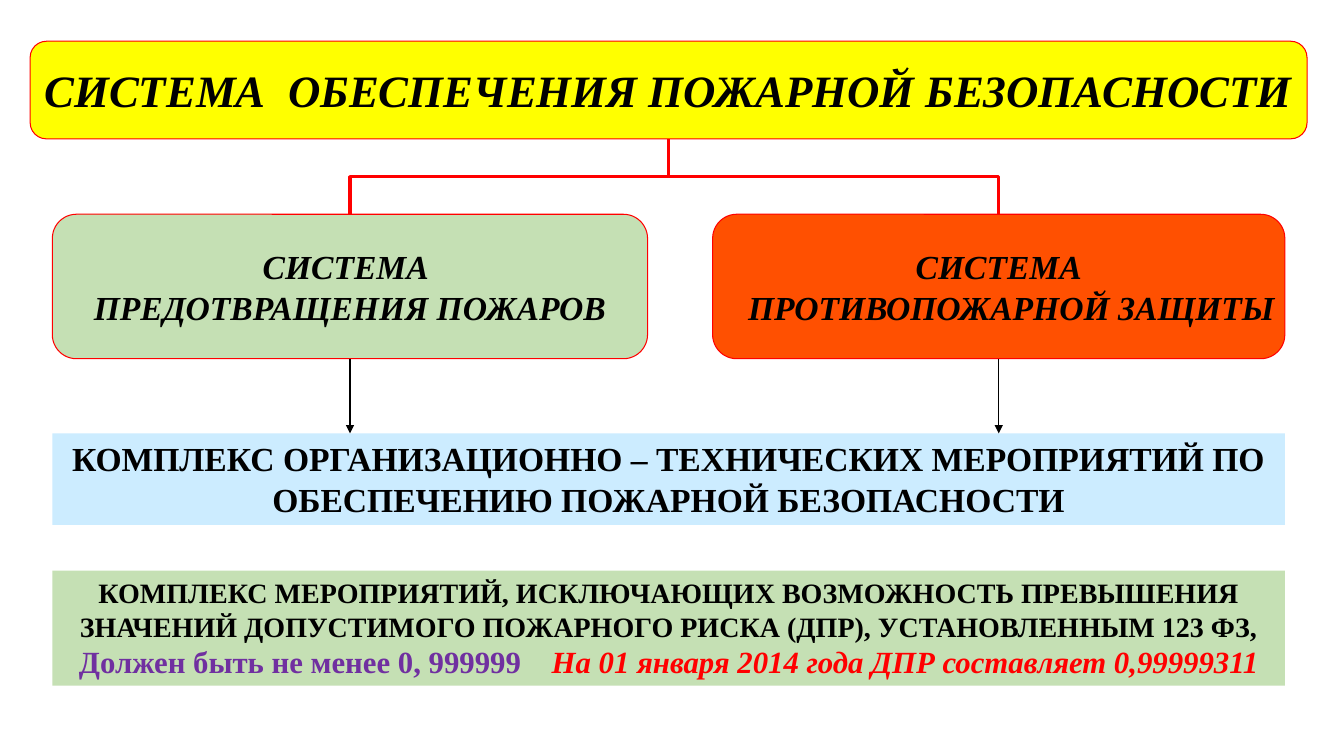
from dataclasses import dataclass

from lxml import etree
from pptx import Presentation
from pptx.dml.color import RGBColor
from pptx.enum.shapes import MSO_CONNECTOR, MSO_SHAPE
from pptx.enum.text import MSO_ANCHOR, PP_ALIGN
from pptx.oxml.ns import qn
from pptx.util import Cm, Pt

ROUNDED, RECTANGLE = MSO_SHAPE.ROUNDED_RECTANGLE, MSO_SHAPE.RECTANGLE
STRAIGHT, ELBOW = MSO_CONNECTOR.STRAIGHT, MSO_CONNECTOR.ELBOW
TOP, MIDDLE = MSO_ANCHOR.TOP, MSO_ANCHOR.MIDDLE
CENTER = PP_ALIGN.CENTER

FONT = "Times New Roman"
BLACK, RED, PURPLE = "000000", "FF0000", "7030A0"
YELLOW, GREEN, ORANGE, BLUE = "FFFF00", "C5E0B4", "FF5001", "CCECFF"


@dataclass
class Span:
    text: str
    color: str = BLACK
    italic: bool = False
    spacing: float = 0  # extra points after each letter


@dataclass
class Para:
    spans: list[Span]
    size: float
    indent: float = 0


@dataclass
class Box:
    """A filled block of text; lengths in centimetres."""
    left: float
    top: float
    width: float
    height: float
    fill: str
    paras: list[Para]
    rounded: bool = False

    @property
    def center(self) -> float:
        return self.left + self.width / 2

    @property
    def bottom(self) -> float:
        return self.top + self.height


def heading(text: str, size: float, indent: float = 0) -> Para:
    return Para([Span(text, italic=True)], size, indent)


TITLE = Box(0.76, 1.04, 32.18, 2.46, YELLOW,
            [heading("СИСТЕМА  ОБЕСПЕЧЕНИЯ ПОЖАРНОЙ БЕЗОПАСНОСТИ", 32)], True)
BRANCHES = [
    Box(1.32, 5.4, 15, 3.64, GREEN,
        [heading("СИСТЕМА ", 24), heading("ПРЕДОТВРАЩЕНИЯ ПОЖАРОВ", 24)], True),
    Box(17.96, 5.4, 14.42, 3.64, ORANGE,
        [heading("СИСТЕМА", 24),
         heading("ПРОТИВОПОЖАРНОЙ ЗАЩИТЫ", 24, indent=0.64)], True),
]
MEASURES = Box(1.32, 10.92, 31.06, 2.31, BLUE, [
    Para([Span("КОМПЛЕКС ОРГАНИЗАЦИОННО – ТЕХНИЧЕСКИХ МЕРОПРИЯТИЙ ПО "
               "ОБЕСПЕЧЕНИЮ ПОЖАРНОЙ БЕЗОПАСНОСТИ")], 24)])
RISK = Box(1.32, 14.38, 31.06, 2.9, GREEN, [
    Para([Span("КОМПЛЕКС МЕРОПРИЯТИЙ, ИСКЛЮЧАЮЩИХ ВОЗМОЖНОСТЬ ПРЕВЫШЕНИЯ "
               "ЗНАЧЕНИЙ ДОПУСТИМОГО ПОЖАРНОГО РИСКА (ДПР), "
               "УСТАНОВЛЕННЫМ 123 ФЗ,")], 20),
    Para([Span("Должен быть не менее 0, 999999", PURPLE),
          Span(" ", PURPLE, spacing=16.5),
          Span("На 01 января 2014 года ДПР составляет 0,99999311",
               RED, italic=True)], 22)])


def rgb(color: str) -> RGBColor:
    return RGBColor.from_string(color)


def write_para(paragraph, para: Para) -> None:
    properties = paragraph._p.get_or_add_pPr()
    if para.indent:
        properties.set("marL", str(Cm(para.indent)))
    paragraph.alignment = CENTER
    paragraph.font.name = FONT
    paragraph.font.size = Pt(para.size)
    paragraph.font.bold = True
    for span in para.spans:
        run = paragraph.add_run()
        run.text = span.text
        run.font.color.rgb = rgb(span.color)
        run.font.italic = span.italic
        if span.spacing:
            run.font._element.set("spc", str(round(span.spacing * 100)))


def draw_box(page, box: Box) -> None:
    shape = page.shapes.add_shape(
        ROUNDED if box.rounded else RECTANGLE,
        Cm(box.left), Cm(box.top), Cm(box.width), Cm(box.height))
    shape.shadow.inherit = False
    shape.fill.solid()
    shape.fill.fore_color.rgb = rgb(box.fill)
    frame = shape.text_frame
    frame.word_wrap = not box.rounded
    frame.vertical_anchor = MIDDLE if box.rounded else TOP
    if box.rounded:
        shape.line.color.rgb = rgb(RED)
        shape.line.width = Pt(0.75)
        frame.margin_left = frame.margin_right = 0
        frame.margin_top = frame.margin_bottom = 0
    else:
        shape.line.fill.background()
    for index, para in enumerate(box.paras):
        paragraph = frame.add_paragraph() if index else frame.paragraphs[0]
        write_para(paragraph, para)


def draw_connector(page, kind, start: tuple[float, float],
                   end: tuple[float, float], color: str, width: float):
    connector = page.shapes.add_connector(
        kind, Cm(start[0]), Cm(start[1]), Cm(end[0]), Cm(end[1]))
    connector.line.color.rgb = rgb(color)
    connector.line.width = Pt(width)
    etree.SubElement(connector._element.spPr, qn("a:effectLst"))
    return connector


def draw_branch_line(page, parent: Box, child: Box) -> None:
    """Elbow leaving the parent downwards: a sideways elbow turned by 90 degrees."""
    middle_x = (parent.center + child.center) / 2
    middle_y = (parent.bottom + child.top) / 2
    half_run = (child.center - parent.center) / 2
    half_drop = (child.top - parent.bottom) / 2
    connector = draw_connector(
        page, ELBOW, (middle_x - half_drop, middle_y + half_run),
        (middle_x + half_drop, middle_y - half_run), RED, 2.25)
    connector._element.spPr.find(qn("a:xfrm")).set("rot", str(90 * 60000))


def draw_arrow(page, source: Box, target: Box) -> None:
    connector = draw_connector(page, STRAIGHT, (source.center, source.bottom),
                               (source.center, target.top), BLACK, 0.75)
    line = connector._element.spPr.find(qn("a:ln"))
    etree.SubElement(line, qn("a:tailEnd"), type="triangle")


def main() -> None:
    deck = Presentation()
    deck.slide_width, deck.slide_height = Cm(33.87), Cm(19.05)
    page = deck.slides.add_slide(deck.slide_layouts[6])
    for branch in BRANCHES:
        draw_branch_line(page, TITLE, branch)
    for box in [TITLE, *BRANCHES, MEASURES, RISK]:
        draw_box(page, box)
    for branch in BRANCHES:
        draw_arrow(page, branch, MEASURES)
    deck.save("out.pptx")


if __name__ == "__main__":
    main()
